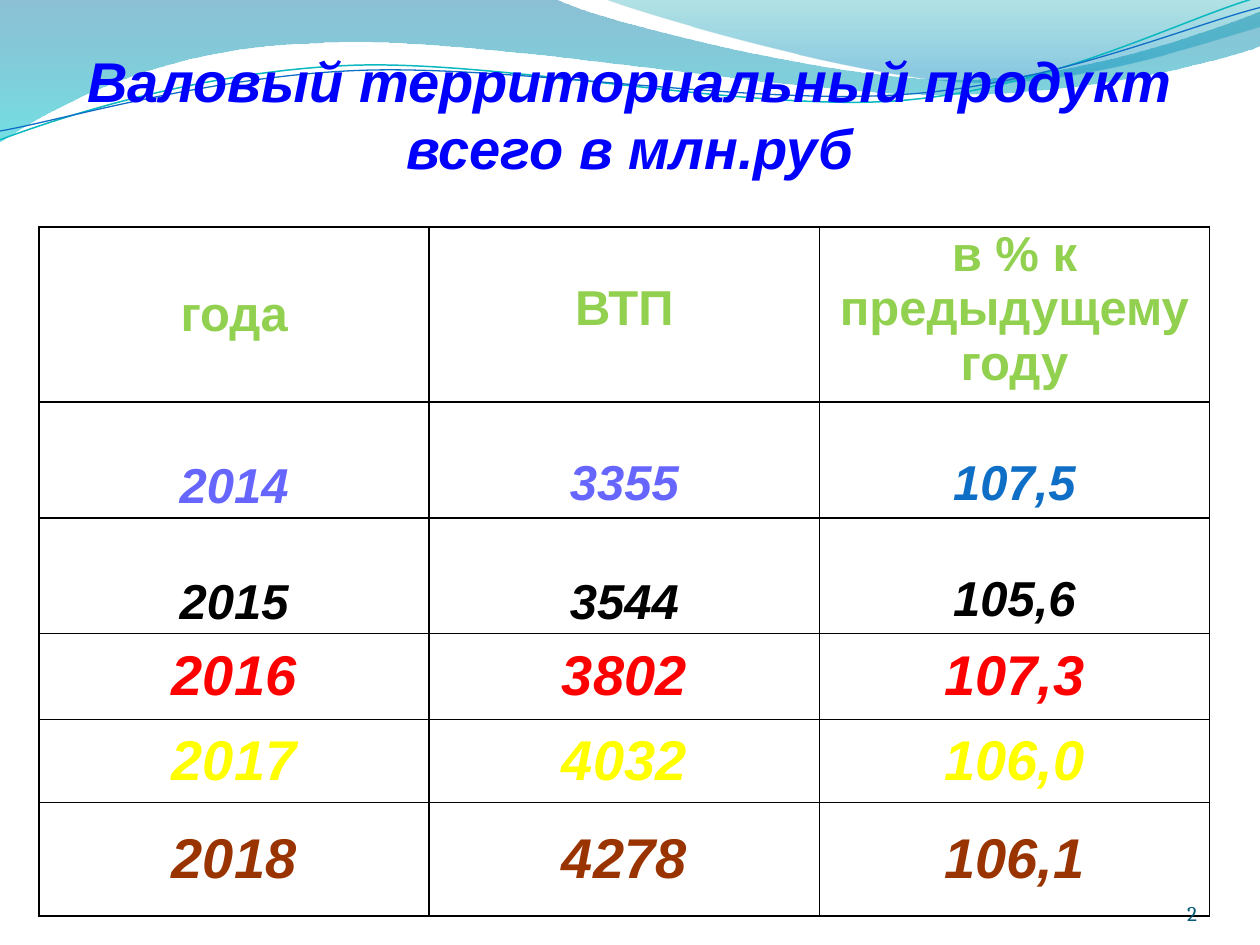
from lxml.etree import SubElement
from pptx import Presentation
from pptx.dml.color import RGBColor
from pptx.enum.text import MSO_ANCHOR as ANCHOR, PP_ALIGN as ALIGN
from pptx.oxml.ns import qn
from pptx.util import Inches, Pt

COLORS = {
    "title": "0000FF", "header": "92D050", "violet": "6666FF", "blue": "0F6FC6",
    "black": "000000", "red": "FF0000", "yellow": "FFFF00", "brown": "993300",
    "number": "045D75", "teal": "0AB8BF", "deep": "0074A1", "cyan": "00C6CF",
    "sea": "00A1A9", "sky": "008BBF",
}
TITLE = "Валовый территориальный продукт всего в млн.руб"
ROWS = [
    (["года", "ВТП", "в % к предыдущему году"], ["header"] * 3, 28, 1.39, "mtt", (0, 1, 0)),
    (["2014", "3355", "107,5"], ["violet", "violet", "blue"], 28, 0.92, "mtt", (1, 1, 1)),
    (["2015", "3544", "105,6"], ["black"] * 3, 28, 0.92, "mmt", (1, 1, 1)),
    (["2016", "3802", "107,3"], ["red"] * 3, 32, 0.68, "mmm", (0, 0, 0)),
    (["2017", "4032", "106,0"], ["yellow"] * 3, 32, 0.66, "mmm", (0, 0, 0)),
    (["2018", "4278", "106,1"], ["brown"] * 3, 32, 0.9, "mmm", (0, 0, 0)),
]
TABLE_W, LINE_H = 9.29, 0.43
ANCHORS = {"m": ANCHOR.MIDDLE, "t": ANCHOR.TOP}

BANDS = [
    ([(0, 0), (4.4, -0.01),
      (4.76, 0.17, 6.64, 0.63, 7.58, 0.63), (8.53, 0.63, 9.58, 0.26, 10, 0.09),
      (10.01, 0.36),
      (9.83, 0.44, 8.7, 0.76, 7.46, 0.75), (6.22, 0.75, 3.82, 0.28, 2.57, 0.34),
      (1.29, 0.36, 0.46, 0.83, -0.01, 1.13)],
     [(0, "deep", 45), (1, "cyan", 55)]),
    ([(4.79, -0.01),
      (5.09, 0.11, 6.82, 0.62, 7.69, 0.65), (8.56, 0.69, 9.61, 0.32, 10, 0.21),
      (10, 0)],
     [(0, "sea", 30), (0.8, "sky", 45)]),
]
WAVES = [
    ([(0, 1.11), (0.48, 0.93, 1.58, 0.57, 2.77, 0.52),
      (3.95, 0.47, 5.93, 0.89, 7.13, 0.8), (8.33, 0.71, 9.38, 0.15, 9.98, -0.02)],
     "teal", 0.85),
    ([(0, 1.04), (0.47, 0.96, 1.64, 0.61, 2.83, 0.56),
      (4.03, 0.51, 5.97, 0.84, 7.17, 0.75), (8.36, 0.67, 9.41, 0.21, 10, 0.06)],
     "blue", 0.75),
]


def rgb(name):
    return RGBColor.from_string(COLORS[name])


def put_text(tf, text, color, size, font="Arial", bold=True, italic=True,
             align=ALIGN.CENTER, anchor=ANCHOR.MIDDLE):
    tf.word_wrap = True
    tf.vertical_anchor = anchor
    p = tf.paragraphs[0]
    p.alignment = align
    r = p.add_run()
    r.text = text
    f = r.font
    f.name, f.size, f.bold, f.italic = font, Pt(size), bold, italic
    f.color.rgb = rgb(color)


def add_outline(s, path, close):
    points = [(Inches(x), Inches(y)) for part in path
              for x, y in zip(part[::2], part[1::2])]
    builder = s.shapes.build_freeform(*points[0], scale=1.0)
    builder.add_line_segments(points[1:], close=close)
    sp = builder.convert_to_shape()
    sp.shadow.inherit = False
    lines = iter(list(sp.element.iter(qn("a:lnTo"))))
    for part in path[1:]:
        first = next(lines)
        if len(part) == 6:
            curve = first.makeelement(qn("a:cubicBezTo"), {})
            first.addprevious(curve)
            for line in (first, next(lines), next(lines)):
                curve.append(line[0])
                line.getparent().remove(line)
    return sp


def add_band(s, path, stops):
    sp = add_outline(s, path, True)
    sp.line.fill.background()
    sp.fill.gradient()
    sp.fill.gradient_angle = 270
    for stop, (position, color, _) in zip(sp.fill.gradient_stops, stops):
        stop.position = position
        stop.color.rgb = rgb(color)
    grad = sp.element.spPr.find(qn("a:gradFill"))
    for clr, (_, _, alpha) in zip(grad.iter(qn("a:srgbClr")), stops):
        SubElement(clr, qn("a:alpha"), val=str(alpha * 1000))


def add_wave(s, path, color, width):
    sp = add_outline(s, path, False)
    sp.fill.background()
    sp.line.color.rgb = rgb(color)
    sp.line.width = Pt(width)


def set_borders(cell):
    tc_pr = cell._tc.get_or_add_tcPr()
    for i, side in enumerate(("lnL", "lnR", "lnT", "lnB")):
        ln = tc_pr.makeelement(qn(f"a:{side}"), {"w": str(Pt(1))})
        fill = SubElement(ln, qn("a:solidFill"))
        SubElement(fill, qn("a:srgbClr"), val=COLORS["black"])
        tc_pr.insert(i, ln)


def add_grid(s):
    height = sum(row[3] for row in ROWS)
    table = s.shapes.add_table(len(ROWS), 3, Inches(0.31), Inches(1.8),
                               Inches(TABLE_W), Inches(height)).table
    table.first_row = table.horz_banding = False
    for col in table.columns:
        col.width = Inches(TABLE_W / 3)
    for i, (texts, colors, size, row_h, anchors, leads) in enumerate(ROWS):
        table.rows[i].height = Inches(row_h)
        for j, (text, color, anchor, lead) in enumerate(zip(texts, colors, anchors, leads)):
            cell = table.cell(i, j)
            cell.fill.background()
            cell.margin_left = cell.margin_right = Inches(0.07)
            cell.margin_top, cell.margin_bottom = Inches(lead * LINE_H), 0
            put_text(cell.text_frame, text, color, size, italic=i > 0)
            cell.vertical_anchor = ANCHORS[anchor]
            set_borders(cell)


def main():
    prs = Presentation()
    prs.slide_width, prs.slide_height = Inches(10), Inches(7.5)
    s = prs.slides.add_slide(prs.slide_layouts[5])
    for band in BANDS:
        add_band(s, *band)
    for wave in WAVES:
        add_wave(s, *wave)
    add_grid(s)

    title = s.shapes.title
    title.left, title.top = 0, Inches(0.31)
    title.width, title.height = prs.slide_width, Inches(1.18)
    put_text(title.text_frame, TITLE, "title", 32)
    title.element.getparent().append(title.element)

    number = s.shapes.add_textbox(Inches(8.67), Inches(6.95), Inches(0.83), Inches(0.4))
    tf = number.text_frame
    tf.margin_left = tf.margin_right = tf.margin_top = tf.margin_bottom = 0
    put_text(tf, "2", "number", 12, font="Cambria", bold=False, italic=False,
             align=ALIGN.RIGHT, anchor=ANCHOR.BOTTOM)
    prs.save("out.pptx")


if __name__ == "__main__":
    main()
